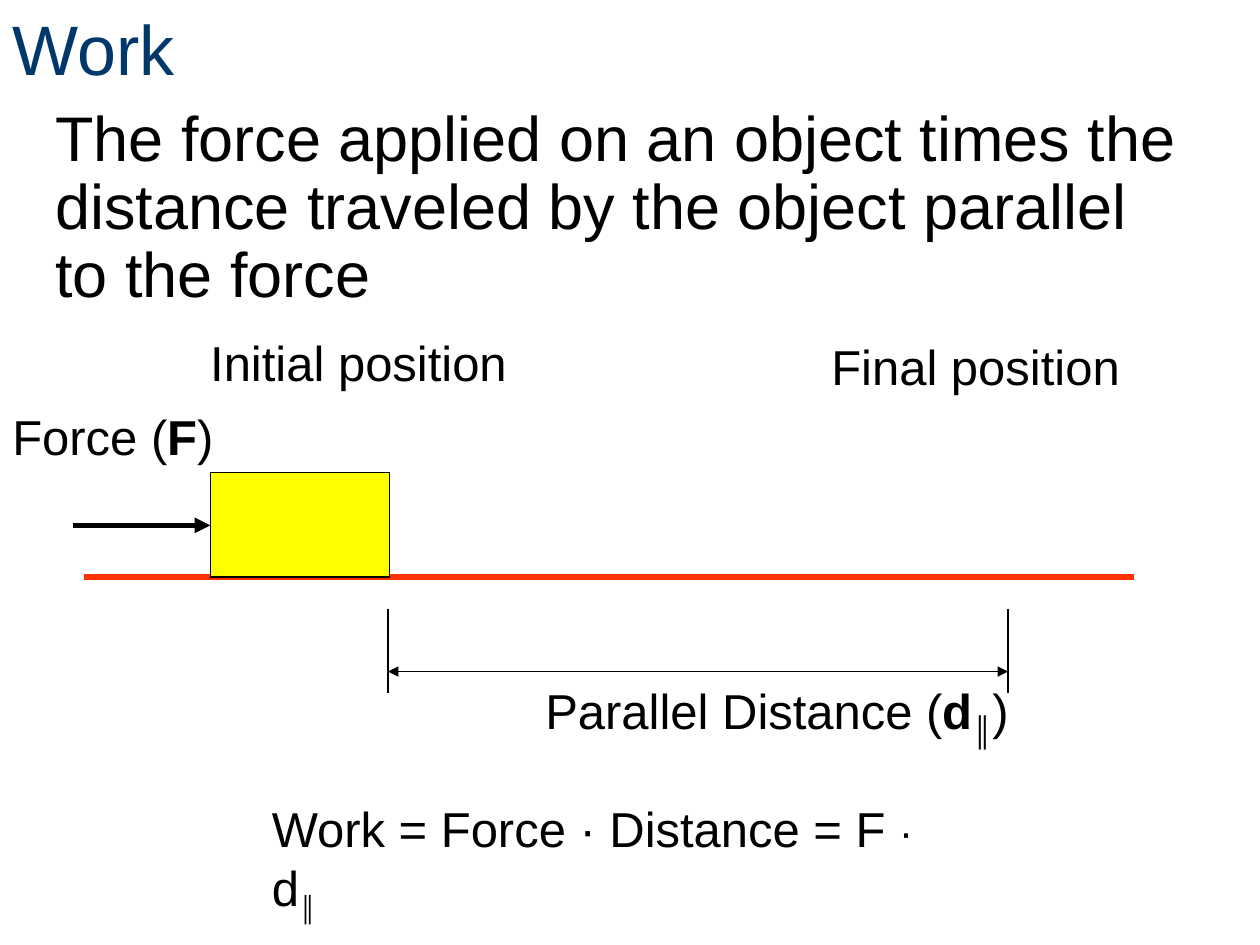
from dataclasses import dataclass

from lxml import etree
from pptx import Presentation
from pptx.dml.color import RGBColor
from pptx.enum.shapes import MSO_CONNECTOR, MSO_SHAPE
from pptx.enum.text import MSO_ANCHOR, MSO_AUTO_SIZE, PP_ALIGN
from pptx.oxml.ns import qn
from pptx.util import Inches, Pt

STRAIGHT = MSO_CONNECTOR.STRAIGHT
RECTANGLE = MSO_SHAPE.RECTANGLE
MIDDLE = MSO_ANCHOR.MIDDLE
TOP = MSO_ANCHOR.TOP
FIT_SHAPE = MSO_AUTO_SIZE.SHAPE_TO_FIT_TEXT
NO_FIT = MSO_AUTO_SIZE.NONE
LEFT = PP_ALIGN.LEFT
TITLE_ONLY = 5


@dataclass(frozen=True)
class Theme:
    font: str = "Arial"
    ink: str = "000000"
    title: str = "00386B"
    ground: str = "FF3300"
    block: str = "FFFF00"
    title_size: int = 40
    body_size: int = 36
    label_size: int = 28
    small_size: int = 24
    thin: float = 0.75
    thick: float = 3


THEME = Theme()


def add_span(para, text, size=THEME.label_size, color=THEME.ink, bold=False, subscript=False):
    span = para.add_run()
    span.text = text
    span.font.name = THEME.font
    span.font.size = Pt(size)
    span.font.bold = bold
    span.font.color.rgb = RGBColor.from_string(color)
    if subscript:
        span._r.get_or_add_rPr().set("baseline", "-25000")


def add_title(slide, text):
    title = slide.shapes.title
    title.left, title.top = Inches(0), Inches(0)
    title.width, title.height = Inches(10), Inches(0.76)
    frame = title.text_frame
    frame.vertical_anchor = MIDDLE
    frame.auto_size = NO_FIT
    para = frame.paragraphs[0]
    para.alignment = LEFT
    add_span(para, text, size=THEME.title_size, color=THEME.title)


def add_text(shapes, left, top, width, height, spans, wrap=False, spacing=None):
    box = shapes.add_textbox(Inches(left), Inches(top), Inches(width), Inches(height))
    frame = box.text_frame
    frame.word_wrap = wrap
    frame.auto_size = FIT_SHAPE
    frame.vertical_anchor = TOP
    para = frame.paragraphs[0]
    para.line_spacing = spacing
    for text, style in spans:
        add_span(para, text, **style)


def add_line(shapes, start, end, color=THEME.ink, weight=THEME.thin, arrows=()):
    line = shapes.add_connector(STRAIGHT, *(Inches(value) for value in (*start, *end)))
    line.line.color.rgb = RGBColor.from_string(color)
    line.line.width = Pt(weight)
    outline = line.line._get_or_add_ln()
    for arrow in arrows:
        etree.SubElement(outline, qn(f"a:{arrow}"), type="triangle")
    etree.SubElement(line._element.spPr, qn("a:effectLst"))


def add_block(shapes, left, top, width, height):
    block = shapes.add_shape(
        RECTANGLE, Inches(left), Inches(top), Inches(width), Inches(height)
    )
    block.shadow.inherit = False
    block.fill.solid()
    block.fill.fore_color.rgb = RGBColor.from_string(THEME.block)
    block.line.color.rgb = RGBColor.from_string(THEME.ink)
    block.line.width = Pt(THEME.thin)


def add_distance_marker(shapes, left, right):
    for edge in (left, right):
        add_line(shapes, (edge, 4.83), (edge, 5.5))
    label = [
        ("Parallel Distance (", {}),
        ("d", {"bold": True}),
        ("║", {"bold": True, "subscript": True}),
        (")", {}),
    ]
    add_text(shapes, 4.23, 5.35, 3.92, 0.57, label)
    add_line(shapes, (left, 5.33), (right, 5.33), arrows=("headEnd", "tailEnd"))


def add_pushed_block(slide):
    shapes = slide.shapes.add_group_shape().shapes
    add_block(shapes, 1.67, 3.75, 1.42, 0.83)
    add_line(shapes, (0.58, 4.17), (1.67, 4.17), weight=THEME.thick, arrows=("tailEnd",))
    label = [("Force (", {}), ("F", {"bold": True}), (")", {})]
    add_text(shapes, 0, 3.18, 1.8, 0.57, label)


def main():
    deck = Presentation()
    deck.slide_width, deck.slide_height = Inches(10), Inches(7.5)
    slide = deck.slides.add_slide(deck.slide_layouts[TITLE_ONLY])
    shapes = slide.shapes

    add_title(slide, "Work")
    definition = (
        "The force applied on an object times the distance traveled "
        "by the object parallel to the force"
    )
    add_text(
        shapes, 0.34, 0.8, 9.15, 1.72,
        [(definition, {"size": THEME.body_size})], wrap=True, spacing=0.9,
    )
    add_line(shapes, (0.67, 4.58), (9, 4.58), color=THEME.ground, weight=THEME.thick)
    add_text(shapes, 1.57, 2.59, 2.56, 0.57, [("Initial position", {})])
    add_text(shapes, 6.5, 2.62, 2.5, 0.57, [("Final position", {})])
    add_distance_marker(shapes, 3.08, 8)
    add_pushed_block(slide)
    formula = [
        ("Work = Force · Distance = F ", {}),
        ("· ", {"size": THEME.small_size}),
        ("d", {}),
        ("║", {"size": THEME.small_size, "bold": True, "subscript": True}),
    ]
    add_text(shapes, 2.06, 6.29, 5.73, 0.57, formula)

    deck.save("out.pptx")


if __name__ == "__main__":
    main()
